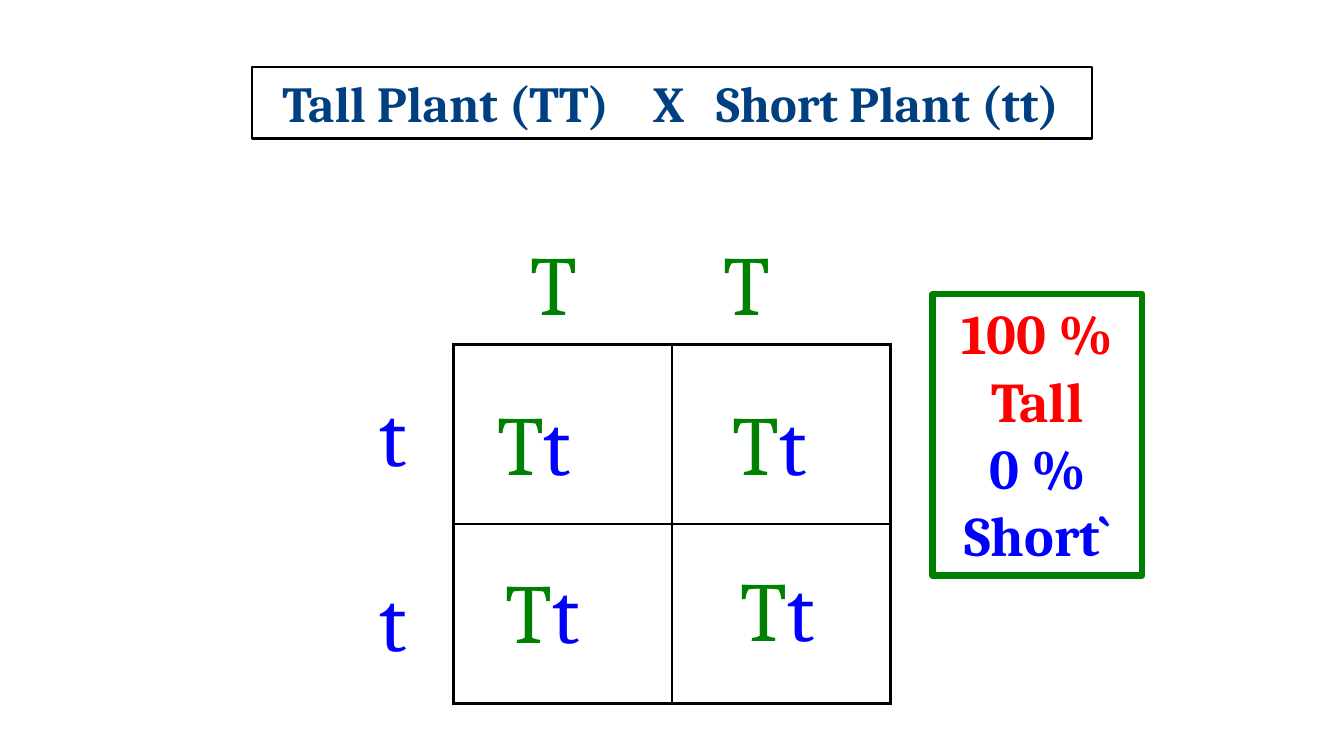
"""Punnett square slide for a tall and short plant cross."""
from lxml import etree
from pptx import Presentation, util as u
from pptx.dml.color import RGBColor
from pptx.enum import shapes, text
from pptx.oxml import parse_xml
from pptx.oxml.ns import nsdecls, qn

BLACK = RGBColor(0, 0, 0)
NAVY = RGBColor(0x00, 0x40, 0x80)
GREEN = RGBColor(0x00, 0x80, 0x00)
BLUE = RGBColor(0x00, 0x00, 0xFF)
RED = RGBColor(0xFF, 0x00, 0x00)
ALLELE = {"T": GREEN, "t": BLUE}


def px(n):
    return u.Emu(n * 9525)


class Deck:
    """Holds the style and the current slide, and draws its elements."""

    face = "Cambria"

    def __init__(self, wide, high):
        self.prs = Presentation()
        self.prs.slide_width, self.prs.slide_height = px(wide), px(high)
        self.slide = self.prs.slides.add_slide(self.prs.slide_layouts[6])

    def style(self, item, size, bold=False):
        item.font.name, item.font.size = self.face, u.Pt(size)
        item.font.bold = bold

    def fit(self, frame):
        frame.word_wrap = True
        frame.vertical_anchor = text.MSO_ANCHOR.TOP
        frame.auto_size = text.MSO_AUTO_SIZE.SHAPE_TO_FIT_TEXT

    def genes(self, word, x, y):
        box = self.slide.shapes.add_textbox(px(x), px(y), px(136), px(107))
        self.fit(box.text_frame)
        par = box.text_frame.paragraphs[0]
        self.style(par, 60)
        for gene in word:
            run = par.add_run()
            run.text = gene
            run.font.color.rgb = ALLELE[gene]

    def panel(self, rows, area, size, edge, width):
        box = self.slide.shapes.add_shape(
            shapes.MSO_SHAPE.RECTANGLE, *map(px, area))
        box.shadow.inherit = False
        box.fill.background()
        box.line.color.rgb, box.line.width = edge, u.Pt(width)
        frame = box.text_frame
        self.fit(frame)
        for i, (words, color) in enumerate(rows):
            par = frame.add_paragraph() if i else frame.paragraphs[0]
            par.text = words
            par.alignment = text.PP_ALIGN.CENTER
            self.style(par, size, True)
            par.font.color.rgb = color
        return frame

    def tabs(self, frame, inset, stops):
        frame.margin_left = px(inset)
        par = frame.paragraphs[0]
        par.alignment = text.PP_ALIGN.LEFT
        props = par.font._element.getparent()
        tags = etree.Element(qn("a:tabLst"))
        for stop in stops:
            etree.SubElement(tags, qn("a:tab"), pos=str(px(stop)), algn="l")
        props.insert(0, tags)

    def edges(self, cell, widths):
        cell.fill.background()
        props = cell._tc.get_or_add_tcPr()
        for i, (side, width) in enumerate(zip("LRTB", widths)):
            props.insert(i, parse_xml(
                f'<a:ln{side} {nsdecls("a")} w="{u.Pt(width)}"><a:solidFill>'
                f'<a:srgbClr val="{BLACK}"/></a:solidFill></a:ln{side}>'))

    def square(self, x, y, wide, high, thick, thin):
        grid = self.slide.shapes.add_table(
            2, 2, px(x), px(y), px(2 * wide), px(2 * high)).table
        grid.first_row = grid.horz_banding = False
        pair = (thick, thin), (thin, thick)
        for r in range(2):
            grid.rows[r].height = px(high)
            grid.columns[r].width = px(wide)
            for c in range(2):
                self.edges(grid.cell(r, c), pair[c] + pair[r])


def main():
    deck = Deck(1280, 720)
    deck.square(432, 328, 208, 171, 2.25, 1)
    title = deck.panel([("Tall Plant (TT)\tX\tShort Plant (tt)", NAVY)],
                       (240, 64, 800, 68), 36, BLACK, 1.5)
    deck.tabs(title, 29, (353, 413))
    for x in (496, 680):
        deck.genes("T", x, 216)
    for y in (360, 536):
        deck.genes("t", 352, y)
    for x, y in ((464, 368), (472, 528), (688, 368), (696, 526)):
        deck.genes("Tt", x, y)
    deck.panel([("100 % Tall", RED), ("0 % Short`", BLUE)],
               (888, 280, 200, 268), 40, GREEN, 4.5)
    deck.prs.save("out.pptx")


if __name__ == "__main__":
    main()
